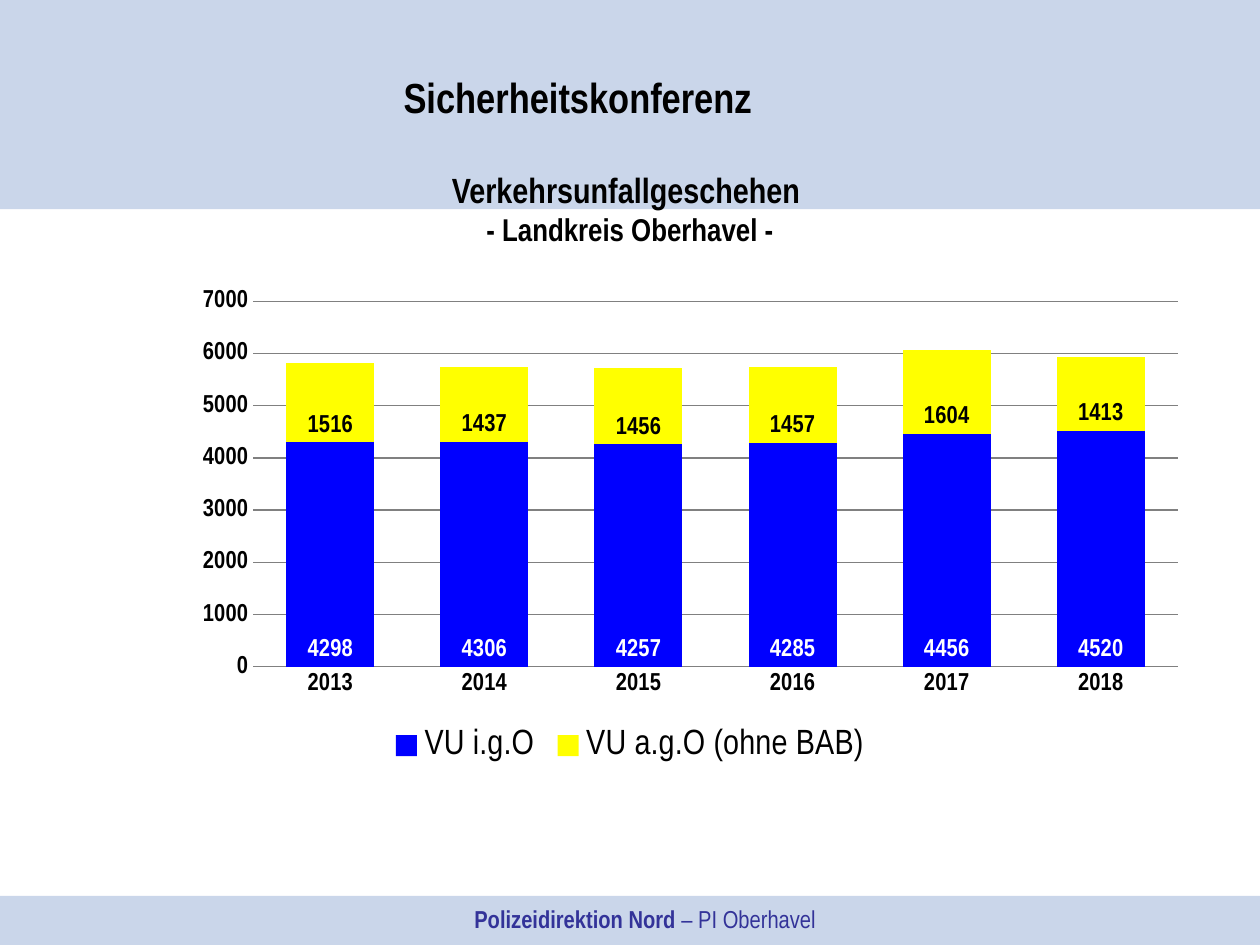
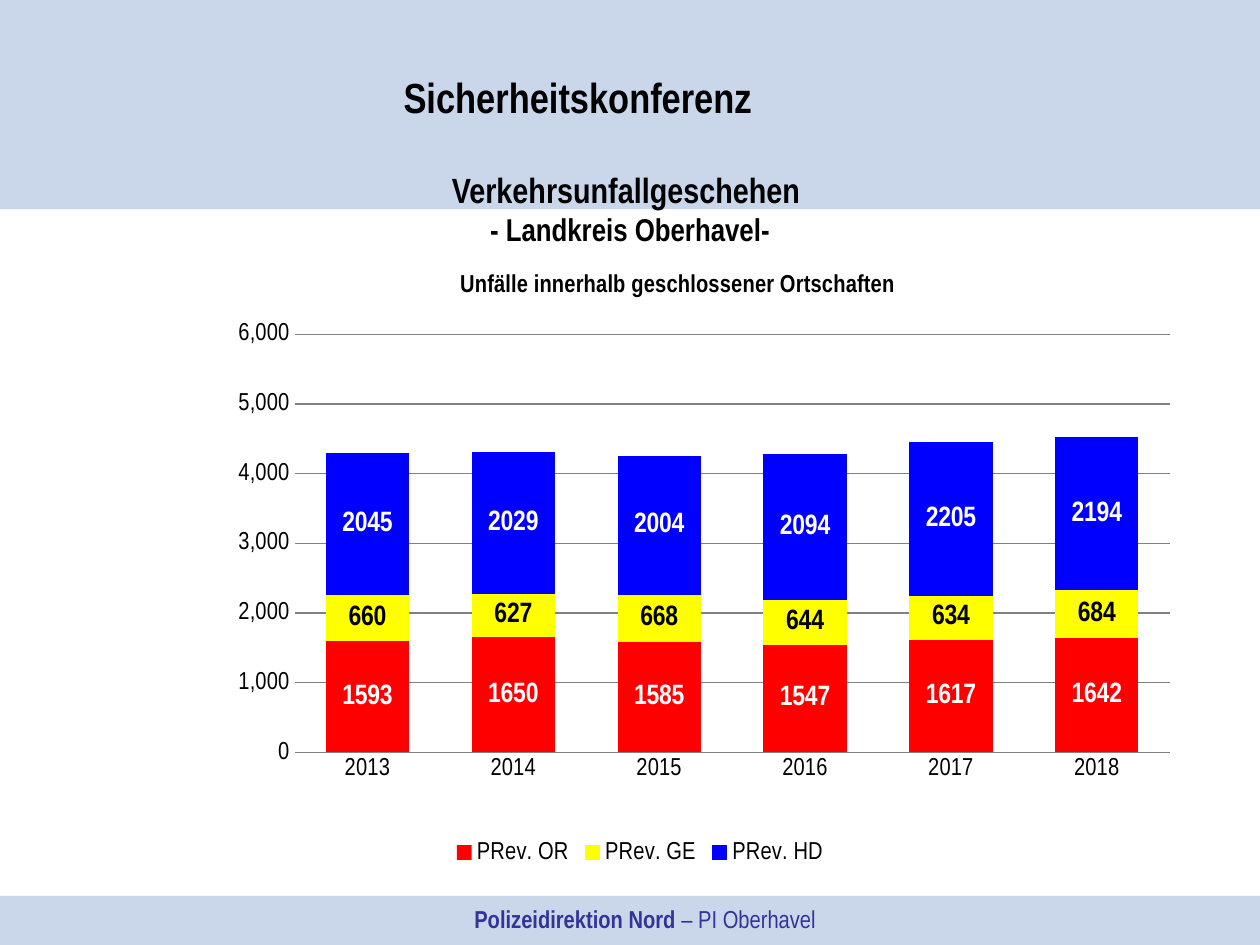
from lxml import etree
from pptx import Presentation
from pptx.chart.data import CategoryChartData
from pptx.dml.color import RGBColor
from pptx.enum.chart import XL_CHART_TYPE, XL_LABEL_POSITION, XL_LEGEND_POSITION, XL_TICK_MARK
from pptx.enum.shapes import MSO_SHAPE
from pptx.enum.text import MSO_ANCHOR, MSO_AUTO_SIZE, PP_ALIGN
from pptx.oxml.ns import qn
from pptx.util import Inches, Pt

STACKED = XL_CHART_TYPE.COLUMN_STACKED
INSIDE_BASE = XL_LABEL_POSITION.INSIDE_BASE
CENTER = XL_LABEL_POSITION.CENTER
BOTTOM = XL_LEGEND_POSITION.BOTTOM
NO_TICK = XL_TICK_MARK.NONE

# Content
EVENT = "Sicherheitskonferenz"
TOPIC = "Verkehrsunfallgeschehen "
FOOTER = [("Polizeidirektion Nord", True), (" – PI Oberhavel", False)]
YEARS = ["2013", "2014", "2015", "2016", "2017", "2018"]
SLIDES = [
    {
        "region": "- Landkreis Oberhavel -",
        "box": (0.47, 2.02, 9.06, 4.09),
        "plot": {"x": 0.17, "y": 0.04, "w": 0.81, "h": 0.76},
        "title": None,
        "maximum": 7500,
        "number_format": "General",
        "axis_bold": True,
        "legend_size": 20,
        "label_size": 14,
        "label_position": INSIDE_BASE,
        "series": [
            ("VU i.g.O", [4298, 4306, 4257, 4285, 4456, 4520], "blue", "white"),
            ("VU a.g.O (ohne BAB)", [1516, 1437, 1456, 1457, 1604, 1413], "yellow", "black"),
        ],
    },
    {
        "region": "- Landkreis Oberhavel-",
        "box": (0.51, 2.02, 9.14, 4.88),
        "plot": {"x": 0.2, "y": 0.13, "w": 0.76, "h": 0.68},
        "title": "Unfälle innerhalb geschlossener Ortschaften ",
        "title_place": {"x": 0.34, "y": 0.02},
        "maximum": 6000,
        "number_format": "#,##0",
        "axis_bold": False,
        "legend_size": 14,
        "label_size": 16,
        "label_position": CENTER,
        "series": [
            ("PRev. OR", [1593, 1650, 1585, 1547, 1617, 1642], "red", "white"),
            ("PRev. GE", [660, 627, 668, 644, 634, 684], "yellow", "black"),
            ("PRev. HD", [2045, 2029, 2004, 2094, 2205, 2194], "blue", "white"),
        ],
    },
]

# Shared style
COLORS = {
    "band": "2E5DAD", "footer": "333399", "grid": "808080", "black": "000000",
    "white": "FFFFFF", "blue": "0000FF", "yellow": "FFFF00", "red": "FF0000",
}
BAND_OPACITY = 25
BANDS = [(0, 7.11, 10.04, 0.39), (0, 0, 10.04, 1.66)]
FOOTER_BOX = (2.48, 7.1, 5.28, 0.39)
EVENT_BOX = (2.93, 0.52, 3.31, 0.5)
TITLE_BOX = (0, 1.31, 10, 0.71)
FONT = "Arial Narrow"


def color(name):
    return RGBColor.from_string(COLORS[name])


def inches(box):
    return [Inches(value) for value in box]


def set_attributes(target, values):
    for name, value in values.items():
        setattr(target, name, value)


def style_font(font, size, bold=False, color_name="black", name=FONT):
    set_attributes(font, {"name": name, "size": Pt(size), "bold": bold})
    font.color.rgb = color(color_name)


def add_text(paragraph, text, size, bold=True, color_name="black"):
    paragraph.alignment = PP_ALIGN.CENTER
    run = paragraph.add_run()
    run.text = text
    style_font(run.font, size, bold, color_name)


def place_in_chart(parent, place, index, inner=False):
    """Give a chart part a manual place, as fractions of the chart."""
    layout = parent.find(qn("c:layout"))
    if layout is None:
        layout = etree.Element(qn("c:layout"))
        parent.insert(index, layout)
    manual = etree.SubElement(layout, qn("c:manualLayout"))
    settings = {"layoutTarget": "inner"} if inner else {}
    settings.update({"xMode": "edge", "yMode": "edge", **place})
    for tag, value in settings.items():
        etree.SubElement(manual, qn(f"c:{tag}")).set("val", str(value))


def add_bands(slide):
    for box in BANDS:
        band = slide.shapes.add_shape(MSO_SHAPE.RECTANGLE, *inches(box))
        band.shadow.inherit = False
        band.line.fill.background()
        band.fill.solid()
        band.fill.fore_color.rgb = color("band")
        fill_color = band.element.find(".//" + qn("a:srgbClr"))
        etree.SubElement(fill_color, qn("a:alpha")).set("val", str(BAND_OPACITY * 1000))


def add_footer(slide):
    frame = slide.shapes.add_textbox(*inches(FOOTER_BOX)).text_frame
    set_attributes(frame, {
        "word_wrap": True, "vertical_anchor": MSO_ANCHOR.MIDDLE, "margin_left": 0,
        "margin_right": 0, "margin_top": 0, "margin_bottom": 0,
    })
    for text, bold in FOOTER:
        add_text(frame.paragraphs[0], text, 14, bold, "footer")


def add_headings(slide, region):
    # Event name in the upper band
    frame = slide.shapes.add_textbox(*inches(EVENT_BOX)).text_frame
    set_attributes(frame, {"word_wrap": True, "auto_size": MSO_AUTO_SIZE.SHAPE_TO_FIT_TEXT})
    add_text(frame.paragraphs[0], EVENT, 24)

    # Slide title, brought in front of the bands
    title = slide.shapes.title
    set_attributes(title, dict(zip(("left", "top", "width", "height"), inches(TITLE_BOX))))
    title.element.getparent().append(title.element)
    frame = title.text_frame
    set_attributes(frame, {
        "word_wrap": True, "auto_size": MSO_AUTO_SIZE.NONE, "vertical_anchor": MSO_ANCHOR.BOTTOM,
    })
    add_text(frame.paragraphs[0], TOPIC, 20)
    add_text(frame.add_paragraph(), region, 18)


def add_accident_chart(slide, content):
    data = CategoryChartData()
    data.categories = YEARS
    for name, values, *_ in content["series"]:
        data.add_series(name, values)
    chart = slide.shapes.add_chart(STACKED, *inches(content["box"]), data).chart
    style_font(chart.font, 18, name="Arial")

    # Title and plot area
    chart.has_title = content["title"] is not None
    if chart.has_title:
        add_text(chart.chart_title.text_frame.paragraphs[0], content["title"], 14)
        chart_title = chart.element.find(".//" + qn("c:title"))
        place_in_chart(chart_title, content["title_place"], 1)
    place_in_chart(chart.element.find(".//" + qn("c:plotArea")), content["plot"], 0, inner=True)

    # Legend
    chart.has_legend = True
    set_attributes(chart.legend, {"position": BOTTOM, "include_in_layout": False})
    style_font(chart.legend.font, content["legend_size"])

    # Axes
    value_axis, category_axis = chart.value_axis, chart.category_axis
    for axis in (value_axis, category_axis):
        set_attributes(axis, {"major_tick_mark": NO_TICK, "minor_tick_mark": NO_TICK})
        style_font(axis.tick_labels.font, 14, content["axis_bold"])
    set_attributes(value_axis, {
        "minimum_scale": 0, "maximum_scale": content["maximum"],
        "major_unit": 1000, "has_major_gridlines": True,
    })
    set_attributes(value_axis.tick_labels, {
        "number_format": content["number_format"], "number_format_is_linked": False,
    })
    value_axis.format.line.fill.background()
    for line in (value_axis.major_gridlines.format.line, category_axis.format.line):
        line.color.rgb = color("grid")
        line.width = Pt(0.75)

    # Columns and their labels
    plot = chart.plots[0]
    set_attributes(plot, {"gap_width": 75, "overlap": 100, "vary_by_categories": False})
    for series, (_, _, fill_name, label_color) in zip(plot.series, content["series"]):
        series.format.fill.solid()
        series.format.fill.fore_color.rgb = color(fill_name)
        labels = series.data_labels
        set_attributes(labels, {"show_value": True, "position": content["label_position"]})
        style_font(labels.font, content["label_size"], True, label_color)


def main():
    presentation = Presentation()
    presentation.slide_width, presentation.slide_height = Inches(10), Inches(7.5)
    title_only = presentation.slide_layouts[5]
    for content in SLIDES:
        slide = presentation.slides.add_slide(title_only)
        add_bands(slide)
        add_footer(slide)
        add_accident_chart(slide, content)
        add_headings(slide, content["region"])
    presentation.save("out.pptx")


if __name__ == "__main__":
    main()
